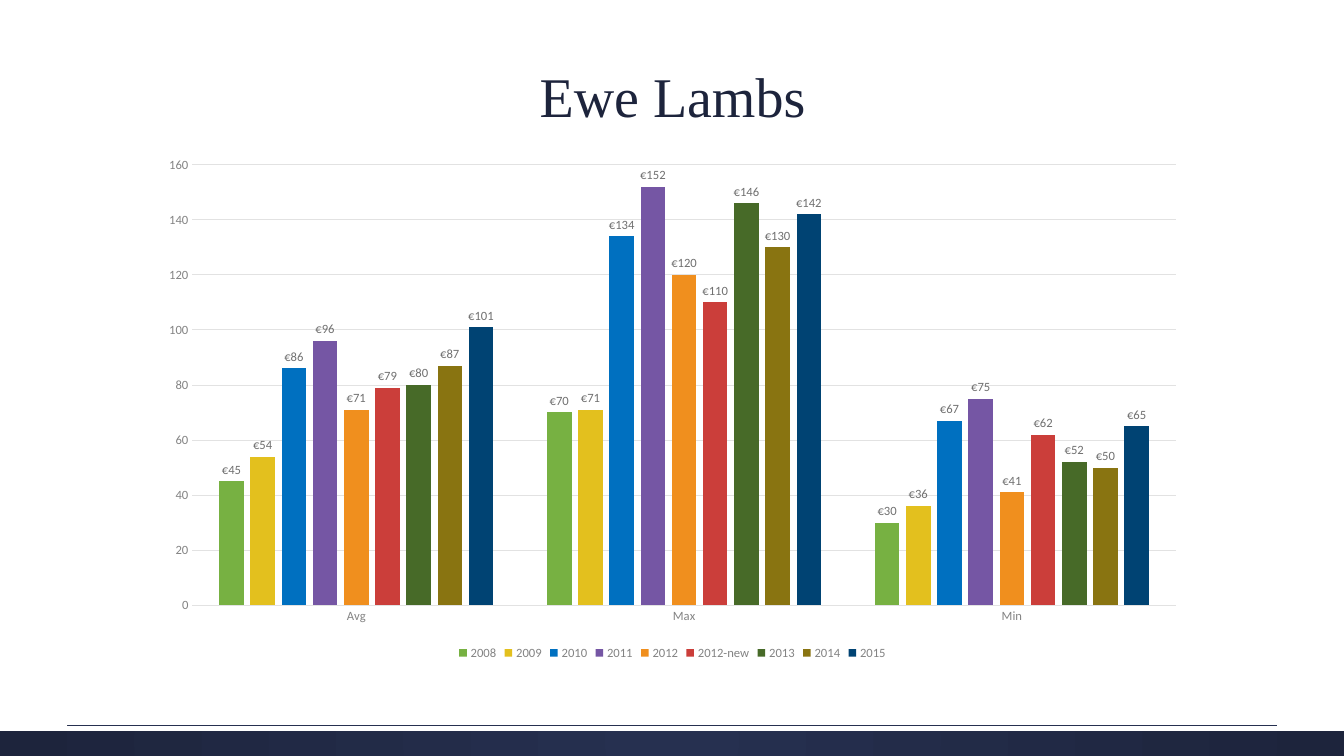
import lxml.etree
import pptx
import pptx.chart.data
import pptx.dml.color
import pptx.enum.chart
import pptx.enum.shapes
import pptx.enum.text
import pptx.oxml.ns
import pptx.util

Inches = pptx.util.Inches
Pt = pptx.util.Pt
qn = pptx.oxml.ns.qn

EURO = '"€"#,##0'
NAVY = "1D243C"
GRID = "E2E2E2"
AXIS_TEXT = "838383"
STATISTICS = ["Avg", "Max", "Min"]
YEARS = [
    ("2008", (45, 70, 30), "77B142"),
    ("2009", (54, 71, 36), "E3C01E"),
    ("2010", (86, 134, 67), "0070C0"),
    ("2011", (96, 152, 75), "7556A4"),
    ("2012", (71, 120, 41), "F08F1E"),
    ("2012-new", (79, 110, 62), "CB3E3A"),
    ("2013", (80, 146, 52), "476A28"),
    ("2014", (87, 130, 50), "897411"),
    ("2015", (101, 142, 65), "004373"),
]


def rgb(value):
    """Turn a hex string into a colour."""
    return pptx.dml.color.RGBColor.from_string(value)


def apply(target, values):
    """Set each named attribute of the target."""
    for name, value in values.items():
        setattr(target, name, value)


def format_font(font, size, colour, name="Calibri"):
    """Give a font its size, colour and typeface."""
    apply(font, {"size": Pt(size), "name": name, "bold": False})
    font.color.rgb = rgb(colour)


def format_line(line, colour, width=0.75):
    """Give a line its colour and width."""
    line.color.rgb = rgb(colour)
    line.width = Pt(width)


def add_band(slide, top, height):
    """Add a full-width rectangle without outline."""
    band = slide.shapes.add_shape(
        pptx.enum.shapes.MSO_SHAPE.RECTANGLE,
        Inches(0), Inches(top), Inches(13.33), Inches(height))
    band.shadow.inherit = False
    band.line.fill.background()
    return band


def fill_radial(band, colours):
    """Fill a band with a gradient that spreads from its centre."""
    band.fill.gradient()
    for stop, colour in zip(band.fill.gradient_stops, colours):
        stop.color.rgb = rgb(colour)
    gradient = band.element.spPr.find(qn("a:gradFill"))
    gradient.remove(gradient.find(qn("a:lin")))
    spread = lxml.etree.SubElement(gradient, qn("a:path"), path="circle")
    lxml.etree.SubElement(
        spread, qn("a:fillToRect"), dict.fromkeys("ltrb", "50000"))


def add_footer(slide):
    """Add the dark footer band, its white gap and the rule above."""
    fill_radial(add_band(slide, 7.2, 0.3), ["263050", NAVY])
    gap = add_band(slide, 7.2, 0.05)
    gap.fill.solid()
    gap.fill.fore_color.rgb = rgb("FFFFFF")
    rule = slide.shapes.add_connector(
        pptx.enum.shapes.MSO_CONNECTOR.STRAIGHT,
        Inches(0.67), Inches(7.2), Inches(12.67), Inches(7.2))
    format_line(rule.line, "263050")
    lxml.etree.SubElement(rule.element.spPr, qn("a:effectLst"))


def add_title(slide, wording):
    """Place and format the slide title."""
    title = slide.shapes.title
    apply(title, {"left": Inches(1.47), "top": Inches(0.51),
                  "width": Inches(10.4), "height": Inches(0.95)})
    title.text_frame.text = wording
    title.text_frame.vertical_anchor = pptx.enum.text.MSO_ANCHOR.MIDDLE
    heading = title.text_frame.paragraphs[0]
    apply(heading, {"alignment": pptx.enum.text.PP_ALIGN.CENTER,
                    "line_spacing": 0.9})
    format_font(heading.runs[0].font, 40, NAVY, "Times New Roman")


def format_axes(chart):
    """Format the category and value axes."""
    no_tick = pptx.enum.chart.XL_TICK_MARK.NONE
    for axis in (chart.category_axis, chart.value_axis):
        apply(axis, {"major_tick_mark": no_tick, "minor_tick_mark": no_tick})
        format_font(axis.tick_labels.font, 9, AXIS_TEXT)
    format_line(chart.category_axis.format.line, GRID)
    prices = chart.value_axis
    apply(prices, {"minimum_scale": 0, "maximum_scale": 160,
                   "major_unit": 20, "has_major_gridlines": True})
    apply(prices.tick_labels, {"number_format": "General",
                               "number_format_is_linked": False})
    prices.format.line.fill.background()
    format_line(prices.major_gridlines.format.line, GRID)


def format_series(series, colour):
    """Colour one year's columns and label their values."""
    series.invert_if_negative = False
    series.format.fill.solid()
    series.format.fill.fore_color.rgb = rgb(colour)
    labels = series.data_labels
    apply(labels, {
        "show_value": True, "number_format": EURO,
        "number_format_is_linked": False,
        "position": pptx.enum.chart.XL_LABEL_POSITION.OUTSIDE_END})
    format_font(labels.font, 9, "707070")


def add_price_chart(slide):
    """Add the clustered columns of prices by year."""
    prices = pptx.chart.data.CategoryChartData(number_format=EURO)
    prices.categories = STATISTICS
    for year, values, _ in YEARS:
        prices.add_series(year, values)
    chart = slide.shapes.add_chart(
        pptx.enum.chart.XL_CHART_TYPE.COLUMN_CLUSTERED,
        Inches(1.47), Inches(1.46), Inches(10.4), Inches(5.13), prices).chart
    apply(chart, {"has_title": False, "has_legend": True})
    format_font(chart.font, 10, "404040")
    apply(chart.legend, {
        "position": pptx.enum.chart.XL_LEGEND_POSITION.BOTTOM,
        "include_in_layout": False})
    format_font(chart.legend.font, 9, AXIS_TEXT)
    format_axes(chart)
    columns = chart.plots[0]
    apply(columns, {"gap_width": 219, "overlap": -27,
                    "vary_by_categories": False})
    for series, (_, _, colour) in zip(columns.series, YEARS):
        format_series(series, colour)


def main():
    """Build the slide and save it."""
    deck = pptx.Presentation()
    apply(deck, {"slide_width": Inches(13.33), "slide_height": Inches(7.5)})
    slide = deck.slides.add_slide(deck.slide_layouts[5])
    add_footer(slide)
    add_title(slide, "Ewe Lambs")
    add_price_chart(slide)
    deck.save("out.pptx")


if __name__ == "__main__":
    main()
